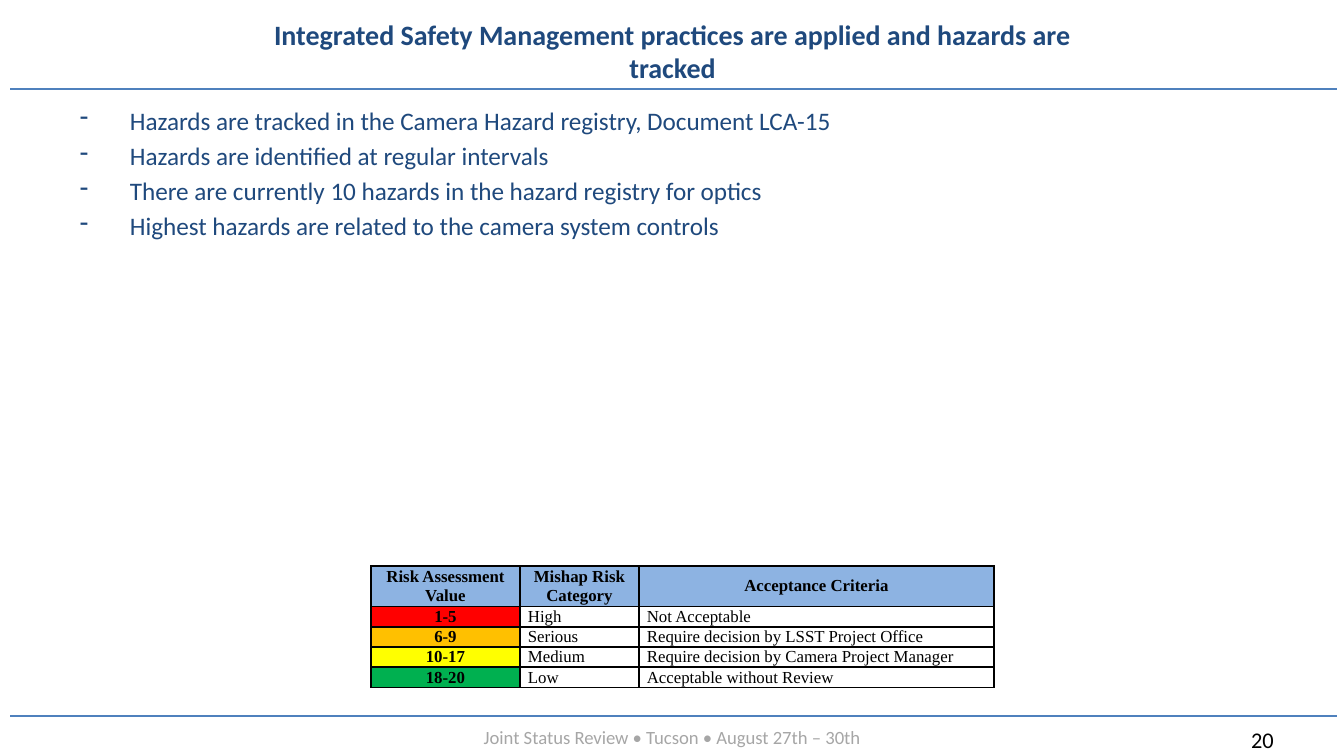
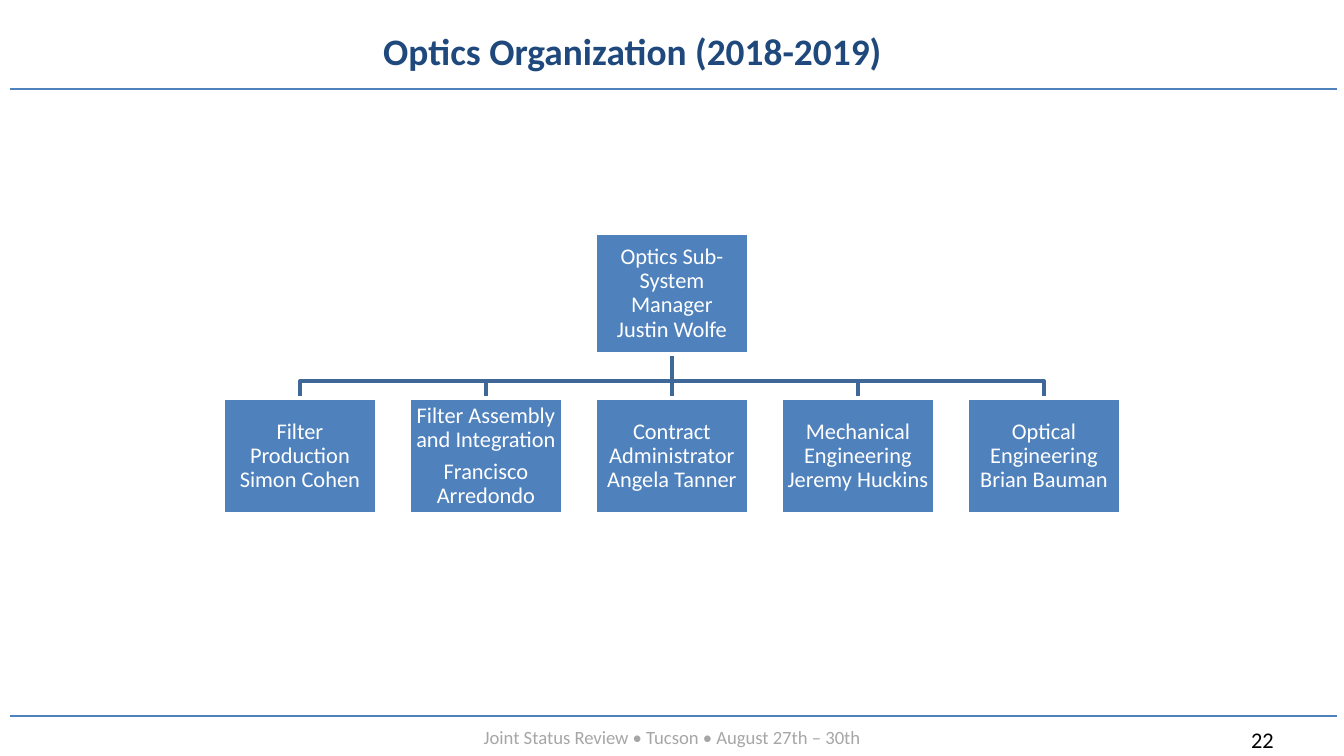
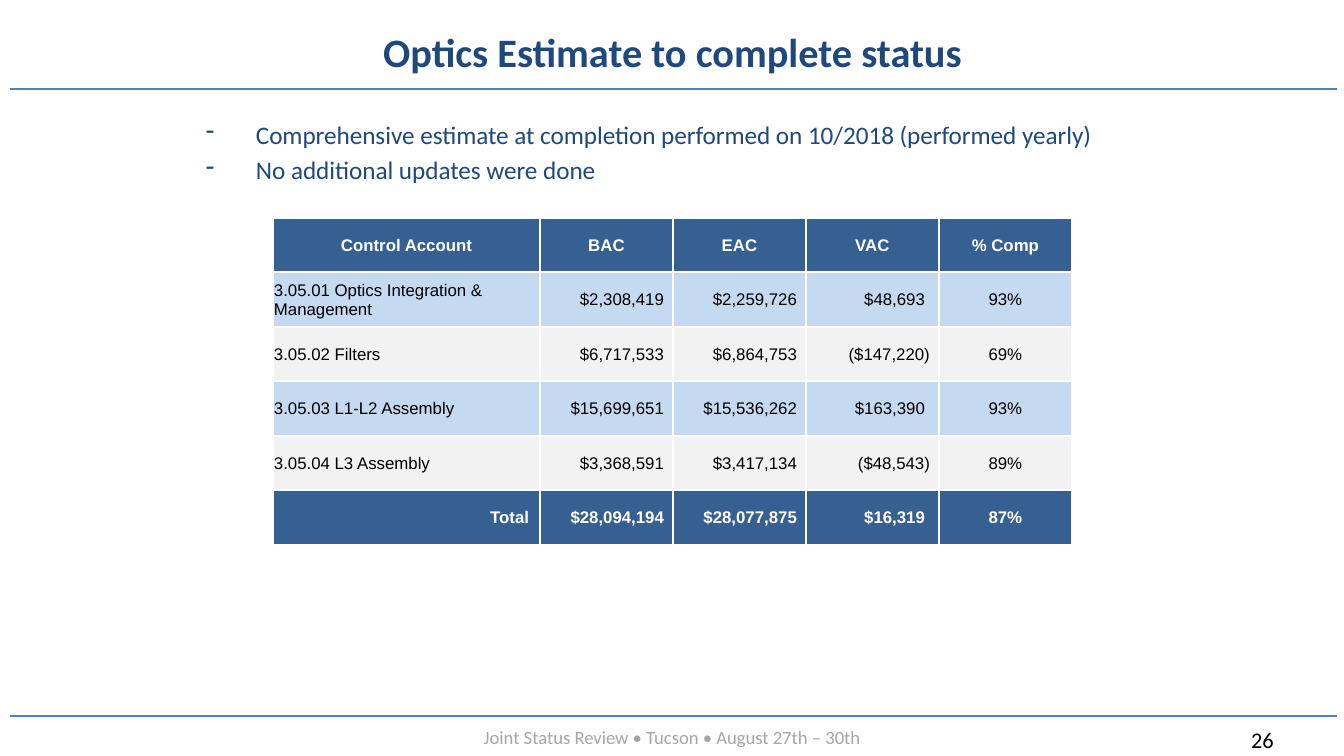
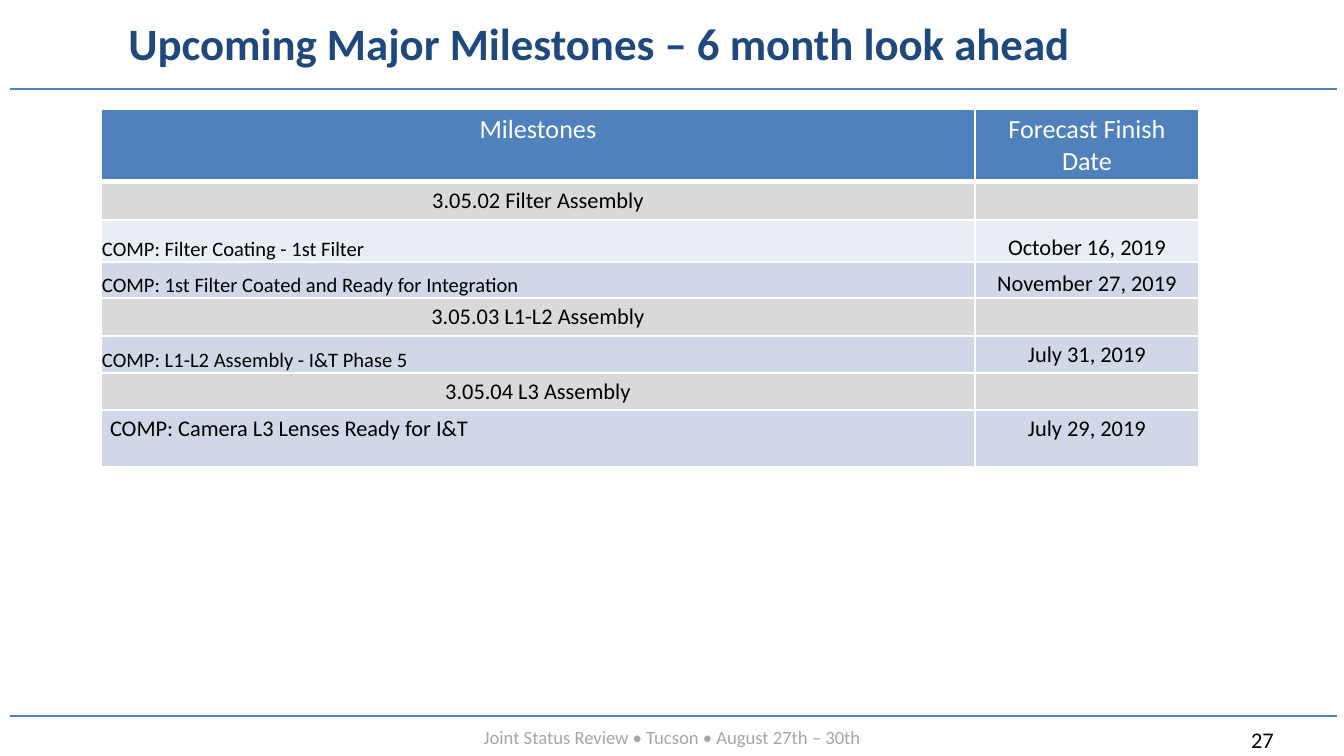
from lxml import etree
from pptx import Presentation, util as u
from pptx.dml.color import RGBColor
from pptx.enum import shapes, text
from pptx.oxml.ns import qn

PX = 914400 / 134.4
HUES = {
    "navy": "1F497D", "blue": "4F81BD", "link": "3F6797", "gray": "A6A6A6",
    "black": "000000", "white": "FFFFFF", "head": "8DB3E2", "red": "FF0000",
    "amber": "FFC000", "yellow": "FFFF00", "green": "00B050", "deep": "366092",
    "sky": "C5D9F1", "pale": "F2F2F2", "silver": "D9D9D9", "mist": "E9EDF4",
    "haze": "D0D8E8",
}
RGB = {name: RGBColor.from_string(code) for name, code in HUES.items()}
SIDES = {"l": text.PP_ALIGN.LEFT, "c": text.PP_ALIGN.CENTER, "r": text.PP_ALIGN.RIGHT}
ENDS = {"t": text.MSO_ANCHOR.TOP, "m": text.MSO_ANCHOR.MIDDLE, "b": text.MSO_ANCHOR.BOTTOM}


def write(host, paras, size, hue, side="l", end="t", font="Calibri", bold=False,
          pad=(13, 7, 13, 7), gap=0, lead=None, dash=False):
    """Fill a text frame or a table cell; a newline is a line break."""
    host.margin_left, host.margin_top, host.margin_right, host.margin_bottom = (
        round(n * PX) for n in pad)
    host.vertical_anchor = ENDS[end]
    frame = getattr(host, "text_frame", host)
    frame.word_wrap = True
    for i, words in enumerate(paras):
        para = frame.paragraphs[0] if i == 0 else frame.add_paragraph()
        para.alignment = SIDES[side]
        if dash:
            props = para._p.get_or_add_pPr()
            props.set("marL", str(round(50 * PX)))
            props.set("indent", str(round(-50 * PX)))
            etree.SubElement(props, qn("a:buChar")).set("char", "-")
        if i:
            para.space_before = u.Pt(gap)
        if lead:
            para.line_spacing = lead
        if not words:
            etree.SubElement(para._p, qn("a:endParaRPr")).set("sz", str(size * 100))
            continue
        for j, line in enumerate(words.split("\n")):
            if j:
                para.add_line_break()
            run = para.add_run()
            run.text = line
            run.font.size = u.Pt(size)
            run.font.name = font
            run.font.bold = bold
            run.font.color.rgb = RGB[hue]


def grid(slide, left, top, cols, rows, edge):
    """Add a table with plain borders and return it."""
    table = slide.shapes.add_table(
        len(rows), len(cols), round(left * PX), round(top * PX),
        round(sum(cols) * PX), round(sum(rows) * PX)).table
    for col, wide in zip(table.columns, cols):
        col.width = round(wide * PX)
    for row, high in zip(table.rows, rows):
        row.height = round(high * PX)
    for cell in table.iter_cells():
        props = cell._tc.get_or_add_tcPr()
        for tag in ("a:lnL", "a:lnR", "a:lnT", "a:lnB"):
            line = etree.SubElement(props, qn(tag), w="12700")
            fill = etree.SubElement(line, qn("a:solidFill"))
            etree.SubElement(fill, qn("a:srgbClr"), val=HUES[edge])
    return table


deck = Presentation()
deck.slide_width, deck.slide_height = round(1344 * PX), round(756 * PX)

# Titles, rules and footers
heads = [
    (20, "Integrated Safety Management practices are applied and hazards are tracked",
     15, (258, 20, 829, 62)),
    (22, "Optics Organization (2018-2019)", 20, (179, 20, 907, 62)),
    (26, "Optics Estimate to complete status", 21.6, (258, 20, 829, 62)),
    (27, "Upcoming Major Milestones – 6 month look ahead", 24, (112, 5, 974, 75)),
]
for page, title, size, spot in heads:
    slide = deck.slides.add_slide(deck.slide_layouts[6])
    for y in (89, 716):
        rule = slide.shapes.add_connector(
            shapes.MSO_CONNECTOR.STRAIGHT, *(round(n * PX) for n in (1337, y, 10, y)))
        rule.line.color.rgb = RGB["blue"]
        rule.line.width = u.Pt(1)
        etree.SubElement(rule._element.spPr, qn("a:effectLst"))
    for words, pts, hue, side, end, bold, area in (
            (title, size, "navy", "c", "m", True, spot),
            (str(page), 12, "black", "l", "t", False, (1238, 719, 83, 40)),
            ("Joint Status Review • Tucson • August 27th – 30th", 10, "gray", "c", "t",
             False, (67, 719, 1210, 36))):
        box = slide.shapes.add_textbox(*(round(n * PX) for n in area))
        write(box.text_frame, [words], pts, hue, side, end, bold=bold)
safety, staff, costs, plan = deck.slides

# Dashed lists
lists = [
    (safety, (67, 98, 1210, 586), [
        "Hazards are tracked in the Camera Hazard registry, Document LCA-15",
        "Hazards are identified at regular intervals",
        "There are currently 10 hazards in the hazard registry for optics",
        "Highest hazards are related to the camera system controls"]),
    (costs, (193, 112, 966, 98), [
        "Comprehensive estimate at completion performed on 10/2018 (performed yearly)",
        "No additional updates were done"]),
]
for slide, area, points in lists:
    box = slide.shapes.add_textbox(*(round(n * PX) for n in area))
    write(box.text_frame, points, 13.5, "navy", gap=2.7, dash=True)

# Risk table
risks = [
    ("head", "Risk Assessment Value", "Mishap Risk Category", "Acceptance Criteria"),
    ("red", "1-5", "High", "Not Acceptable"),
    ("amber", "6-9", "Serious", "Require decision by LSST Project Office"),
    ("yellow", "10-17", "Medium", "Require decision by Camera Project Manager"),
    ("green", "18-20", "Low", "Acceptable without Review"),
]
table = grid(safety, 371, 566, [149, 119, 355], [40] + [20] * 4, "black")
for r, (hue, *row) in enumerate(risks):
    for c, words in enumerate(row):
        cell = table.cell(r, c)
        strong = r == 0 or c == 0
        cell.fill.solid()
        cell.fill.fore_color.rgb = RGB[hue if strong else "white"]
        write(cell, [words], 9, "black", "c" if strong else "l", "m",
              "Times New Roman", strong, (8, 0, 8, 0))

# Organization tree
mid, step, wide = 672, 186, 153
team = [
    ["Filter Production\nSimon Cohen"],
    ["Filter Assembly and Integration", "Francisco Arredondo"],
    ["Contract Administrator\nAngela Tanner"],
    ["Mechanical Engineering\nJeremy Huckins"],
    ["Optical Engineering\nBrian Bauman"],
]
nodes = [(mid + (i - 2) * step, 398, 116, words) for i, words in enumerate(team)]
path = staff.shapes.build_freeform(mid, 354, scale=PX)
for x, y, high, words in nodes:
    path.move_to(mid, 354)
    path.add_line_segments([(mid, 381), (x, 381), (x, y)], close=False)
tree = path.convert_to_shape()
tree.shadow.inherit = False
tree.fill.background()
tree.line.color.rgb = RGB["link"]
tree.line.width = u.Pt(2)

lead = (mid, 233, 121, ["Optics Sub-System Manager\nJustin Wolfe"])
for x, y, high, words in [lead] + nodes:
    box = staff.shapes.add_shape(
        shapes.MSO_SHAPE.RECTANGLE,
        *(round(n * PX) for n in (x - wide / 2, y, wide, high)))
    box.shadow.inherit = False
    box.fill.solid()
    box.fill.fore_color.rgb = RGB["blue"]
    box.line.color.rgb = RGB["white"]
    box.line.width = u.Pt(2)
    write(box.text_frame, words, 12, "white", "c", "m", pad=(1, 1, 1, 1),
          gap=4.2, lead=0.9)

# Cost table
sums = [
    ("Control Account", "BAC", "EAC", "VAC", "% Comp"),
    ("3.05.01 Optics Integration & Management", "$2,308,419", "$2,259,726", "$48,693", "93%"),
    ("3.05.02 Filters", "$6,717,533", "$6,864,753", "($147,220)", "69%"),
    ("3.05.03 L1-L2 Assembly", "$15,699,651", "$15,536,262", "$163,390", "93%"),
    ("3.05.04 L3 Assembly", "$3,368,591", "$3,417,134", "($48,543)", "89%"),
    ("Total", "$28,094,194", "$28,077,875", "$16,319", "87%"),
]
table = grid(costs, 273, 218, [267] + [133] * 4, [54, 55] * 3, "white")
for r, row in enumerate(sums):
    strong = r in (0, 5)
    for c, words in enumerate(row):
        side, right = "c", 1
        if r and c in (1, 2, 3):
            side, right = "r", 14 if c == 3 and words[0] == "$" else 9
        elif r == 5 and c == 0:
            side, right = "r", 11
        elif r and c == 0:
            side = "l"
        cell = table.cell(r, c)
        cell.fill.solid()
        cell.fill.fore_color.rgb = RGB["deep" if strong else "sky" if r % 2 else "pale"]
        write(cell, [words], 9, "white" if strong else "black", side, "m",
              "Arial", strong, (1, 1, right, 0))

# Milestone table: each half holds words, size, side, anchor
goals = [
    (73, "blue", ("Milestones", 14, "c", "t"), ("Forecast Finish Date", 14, "c", "t")),
    (38, "silver", ("3.05.02 Filter Assembly", 12, "c", "t"), ("", 12, "c", "t")),
    (42, "mist", ("COMP: Filter Coating - 1st Filter", 11, "l", "b"),
     ("October 16, 2019", 12, "c", "b")),
    (36, "haze", ("COMP: 1st Filter Coated and Ready for Integration", 11, "l", "b"),
     ("November 27, 2019", 12, "c", "b")),
    (38, "silver", ("3.05.03 L1-L2 Assembly", 12, "c", "t"), ("", 12, "c", "t")),
    (37, "haze", ("COMP: L1-L2 Assembly - I&T Phase 5", 11, "l", "b"),
     ("July 31, 2019", 12, "c", "t")),
    (37, "silver", ("3.05.04 L3 Assembly", 12, "c", "t"), ("", 12, "c", "t")),
    (57, "haze", ("COMP: Camera L3 Lenses Ready for I&T", 12, "l", "t"),
     ("July 29, 2019", 12, "c", "t")),
]
table = grid(plan, 101, 109, [874, 224], [goal[0] for goal in goals], "white")
for r, (high, hue, *row) in enumerate(goals):
    for c, (words, size, side, end) in enumerate(row):
        cell = table.cell(r, c)
        cell.fill.solid()
        cell.fill.fore_color.rgb = RGB[hue]
        write(cell, [words], size, "black" if r else "white", side, end,
              pad=(1, 1, 1, 0) if end == "b" else (9, 5, 9, 5))
        if r == 0:
            cell._tc.tcPr.find(qn("a:lnB")).set("w", "38100")

deck.save("out.pptx")
